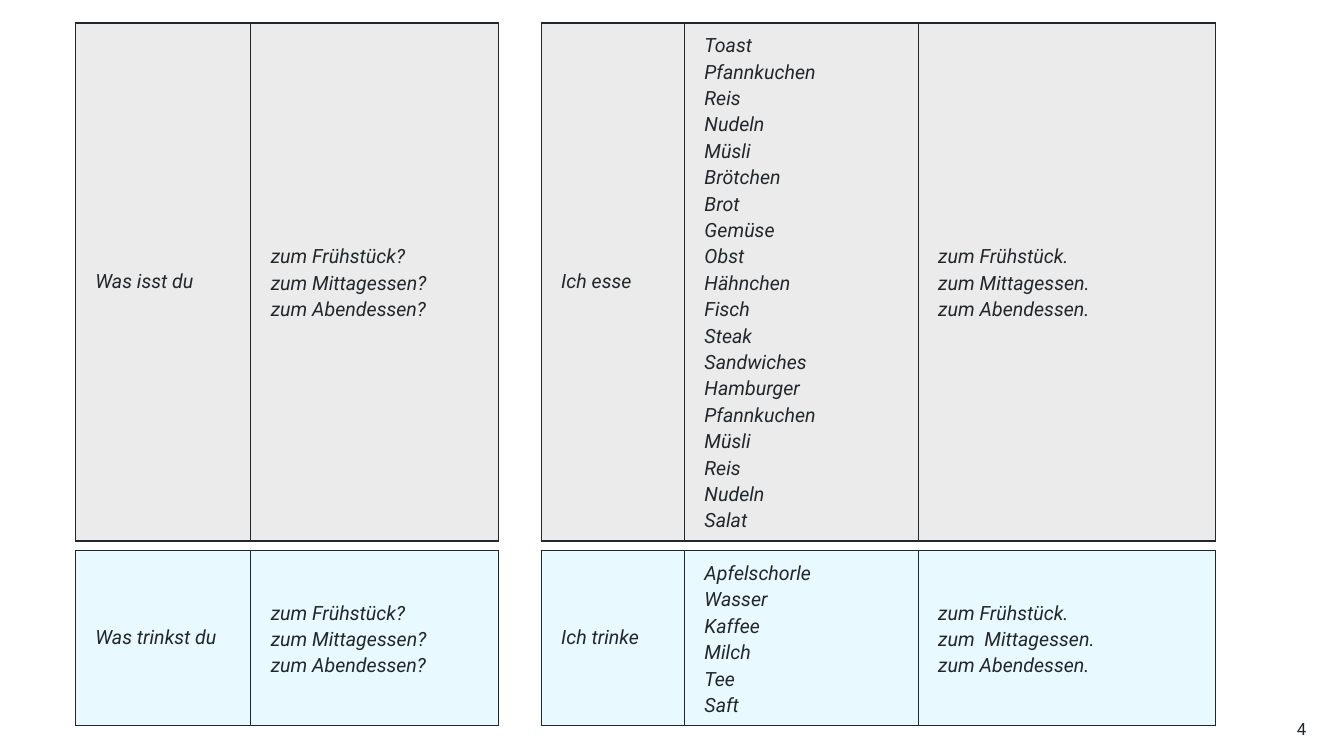
from lxml import etree
from pptx import Presentation
from pptx.dml.color import RGBColor
from pptx.enum.text import MSO_ANCHOR, PP_ALIGN
from pptx.oxml.ns import qn
from pptx.util import Cm, Pt

MIDDLE = MSO_ANCHOR.MIDDLE
RIGHT = PP_ALIGN.RIGHT

INK = RGBColor(0x22, 0x27, 0x2B)
FOOD_FILL = RGBColor(0xEB, 0xEB, 0xEB)
DRINK_FILL = RGBColor(0xE8, 0xF9, 0xFF)
FONT = "Roboto"
BORDER = Pt(1)
INDENT = Cm(0.25)
LIST_SPACING = 1.14

QUESTION_LEFT, ANSWER_LEFT = Cm(1.9), Cm(13.64)
FOOD_TOP, DRINK_TOP = Cm(0.58), Cm(13.87)
FOOD_HEIGHT, DRINK_HEIGHT = Cm(13.05), Cm(4.42)
QUESTION_WIDTHS = [Cm(4.42), Cm(6.25)]
ANSWER_WIDTHS = [Cm(3.61), Cm(5.89), Cm(7.49)]

MEAL_QUESTIONS = ["zum Frühstück?", "zum Mittagessen?", "zum Abendessen?"]
FOOD_MEALS = ["zum Frühstück.", "zum Mittagessen.", "zum Abendessen."]
DRINK_MEALS = ["zum Frühstück.", "zum  Mittagessen.", "zum Abendessen."]
FOODS = [
    "Toast", "Pfannkuchen", "Reis", "Nudeln", "Müsli", "Brötchen", "Brot",
    "Gemüse", "Obst", "Hähnchen", "Fisch", "Steak", "Sandwiches",
    "Hamburger", "Pfannkuchen", "Müsli", "Reis", "Nudeln", "Salat",
]
DRINKS = ["Apfelschorle", "Wasser", "Kaffee", "Milch", "Tee", "Saft"]


def style_font(paragraph, size, italic=False):
    font = paragraph.font
    font.name = FONT
    font.size = Pt(size)
    font.italic = italic
    font.color.rgb = INK


def add_borders(cell):
    properties = cell._tc.get_or_add_tcPr()
    for side in ("a:lnL", "a:lnR", "a:lnT", "a:lnB"):
        line = etree.SubElement(properties, qn(side), w=str(BORDER))
        fill = etree.SubElement(line, qn("a:solidFill"))
        etree.SubElement(fill, qn("a:srgbClr"), val=str(INK))


def fill_cell(cell, phrases, color):
    add_borders(cell)
    cell.fill.solid()
    cell.fill.fore_color.rgb = color
    cell.vertical_anchor = MIDDLE
    cell.text = "\n".join(phrases)
    for paragraph in cell.text_frame.paragraphs:
        paragraph._p.get_or_add_pPr().set("marL", str(INDENT))
        if len(phrases) > 1:
            paragraph.line_spacing = LIST_SPACING
        style_font(paragraph, 14, italic=True)


def add_sentence_table(slide, left, top, height, widths, color, parts):
    """Add a one-row table with one cell for each part of the sentence."""
    table = slide.shapes.add_table(
        1, len(parts), left, top, sum(widths), height).table
    table.first_row = False
    table.horz_banding = False
    for column, width in zip(table.columns, widths):
        column.width = width
    for cell, phrases in zip(table.rows[0].cells, parts):
        fill_cell(cell, phrases, color)


def add_page_number(slide, number):
    frame = slide.shapes.add_textbox(
        Cm(30.91), Cm(18.11), Cm(2.01), Cm(0.51)).text_frame
    frame.word_wrap = True
    frame.margin_left = frame.margin_right = 0
    frame.margin_top = frame.margin_bottom = 0
    paragraph = frame.paragraphs[0]
    paragraph.text = number
    paragraph.alignment = RIGHT
    style_font(paragraph, 12)


def main():
    prs = Presentation()
    prs.slide_width, prs.slide_height = Cm(33.87), Cm(19.05)
    slide = prs.slides.add_slide(prs.slide_layouts[6])

    topics = [
        (FOOD_TOP, FOOD_HEIGHT, FOOD_FILL,
         "Was isst du", "Ich esse", FOODS, FOOD_MEALS),
        (DRINK_TOP, DRINK_HEIGHT, DRINK_FILL,
         "Was trinkst du", "Ich trinke", DRINKS, DRINK_MEALS),
    ]
    for top, height, color, question, answer, choices, meals in topics:
        add_sentence_table(slide, QUESTION_LEFT, top, height, QUESTION_WIDTHS,
                           color, [[question], MEAL_QUESTIONS])
        add_sentence_table(slide, ANSWER_LEFT, top, height, ANSWER_WIDTHS,
                           color, [[answer], choices, meals])
    add_page_number(slide, "4")
    prs.save("out.pptx")


if __name__ == "__main__":
    main()
